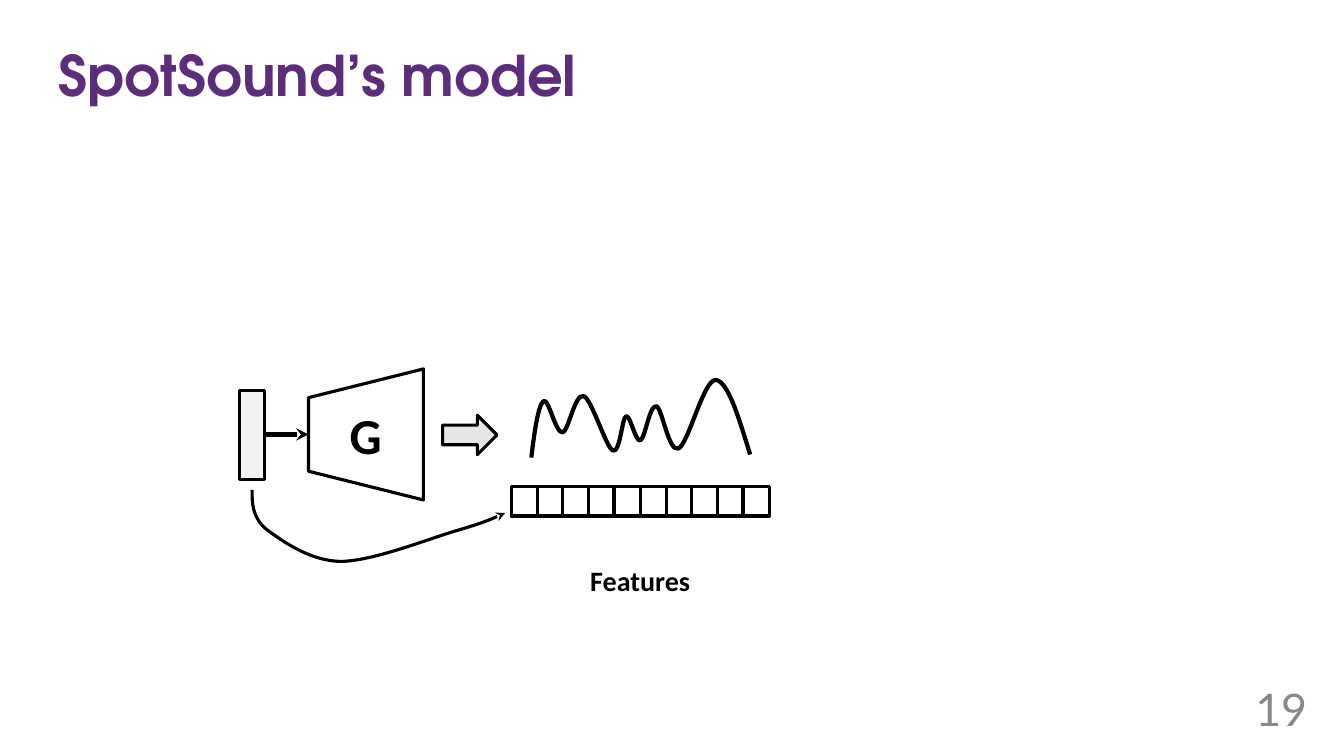
from lxml.etree import SubElement
from pptx import Presentation
from pptx.dml.color import RGBColor
from pptx.enum.shapes import MSO_CONNECTOR, MSO_SHAPE
from pptx.enum.text import MSO_AUTO_SIZE, PP_ALIGN
from pptx.oxml.ns import qn
from pptx.util import Pt

PX = 9144  # 100 px to the inch
COLORS = {"ink": "000000", "title": "5B2D7B", "number": "898989",
          "arrow": "E7E6E6", "noise": "F2F2F2"}


def style(shape, weight, fill=None, arrow=False):
    """Set a black outline, an optional fill and arrowhead, and no shadow."""
    shape.line.color.rgb = RGBColor.from_string(COLORS["ink"])
    shape.line.width = Pt(weight)
    if hasattr(shape, "fill"):
        shape.shadow.inherit = False
        if fill:
            shape.fill.solid()
            shape.fill.fore_color.rgb = RGBColor.from_string(COLORS[fill])
        else:
            shape.fill.background()
    else:
        SubElement(shape._element.spPr, qn("a:effectLst"))
    if arrow:
        SubElement(shape.line._get_or_add_ln(), qn("a:tailEnd"), type="stealth")


def add_text(shapes, box, text, size, font, color, bold=True):
    label = shapes.add_textbox(*(n * PX for n in box))
    frame = label.text_frame
    frame.word_wrap = True
    frame.auto_size = MSO_AUTO_SIZE.SHAPE_TO_FIT_TEXT
    run = frame.paragraphs[0].add_run()
    run.text = text
    run.font.size = Pt(size)
    run.font.name = font
    run.font.bold = bold
    run.font.color.rgb = RGBColor.from_string(COLORS[color])
    return frame


prs = Presentation()
prs.slide_width, prs.slide_height = 1333 * PX, 750 * PX
slide = prs.slides.add_slide(prs.slide_layouts[6])

# Page number and title
page_number = add_text(slide.shapes, (1241, 700, 69, 32), "19", 32, "Lato", "number", False)
page_number.margin_left = page_number.margin_right = 0
page_number.margin_top = page_number.margin_bottom = 0
page_line = page_number.paragraphs[0]
page_line.line_spacing = Pt(21.2)
page_line._p.get_or_add_pPr().set("marL", str(4 * PX))
page_line.runs[0].font._element.set("spc", "-20")
add_text(slide.shapes, (48, 35, 782, 77), "SpotSound’s model", 40,
         "TeX Gyre Adventor", "title")

# Generator with its input vector and output arrow
generator = slide.shapes.add_group_shape().shapes
for kind, box, fill, turn in (
    (MSO_SHAPE.TRAPEZOID, (298, 374, 130, 114), None, 270),
    (MSO_SHAPE.RIGHT_ARROW, (439, 412, 54, 39), "arrow", 0),
    (MSO_SHAPE.RECTANGLE, (238, 387, 24, 89), "noise", 0),
):
    part = generator.add_shape(kind, *(n * PX for n in box))
    part.rotation = turn
    style(part, 2.25, fill)
generator_label = add_text(generator, (337, 396, 52, 71), "G", 36, "Calibri", "ink")
generator_label.word_wrap = False

# Curves: a start point, then two control points and an end point per piece
skip_path = [(250, 486), (250, 499), (250, 513), (264, 525),
             (279, 536), (306, 556), (337, 557),
             (369, 557), (424, 535), (451, 527),
             (478, 519), (490, 514), (501, 509)]
sound_wave = [(527, 454), (530, 428), (534, 402), (539, 398),
              (544, 394), (551, 430), (558, 429),
              (564, 428), (570, 390), (579, 393),
              (587, 396), (601, 444), (608, 447),
              (615, 450), (617, 414), (621, 413),
              (625, 411), (630, 438), (635, 437),
              (640, 435), (644, 402), (651, 403),
              (657, 405), (663, 449), (673, 445),
              (683, 440), (698, 376), (710, 377),
              (722, 378), (733, 415), (744, 451)]
for points, weight, arrow in ((skip_path, 2.25, True), (sound_wave, 3, False)):
    builder = slide.shapes.build_freeform(*points[0], scale=PX)
    builder.add_line_segments(points[1:], close=False)
    curve = builder.convert_to_shape()
    style(curve, weight, arrow=arrow)
    outline = curve._element.find(".//" + qn("a:path"))
    segments = outline.findall(qn("a:lnTo"))
    for first in range(0, len(segments), 3):
        bezier = SubElement(outline, qn("a:cubicBezTo"))
        for segment in segments[first:first + 3]:
            bezier.append(segment[0])
            outline.remove(segment)

input_arrow = slide.shapes.add_connector(
    MSO_CONNECTOR.STRAIGHT, 262 * PX, 431 * PX, 306 * PX, 431 * PX)
style(input_arrow, 3, arrow=True)

# Feature strip of ten cells
left, top, width, height, cells = 507, 483, 256, 29, 10
features = slide.shapes.add_group_shape().shapes
for i in range(cells + 1):
    x = round(left + i * width / cells) * PX
    divider = features.add_connector(
        MSO_CONNECTOR.STRAIGHT, x, top * PX, x, (top + height) * PX)
    style(divider, 2.25)
strip = features.add_shape(MSO_SHAPE.RECTANGLE, left * PX, top * PX, width * PX, height * PX)
style(strip, 2.25)
caption = add_text(slide.shapes, (507, 554, 256, 44), "Features", 20, "Calibri", "ink")
caption.paragraphs[0].alignment = PP_ALIGN.CENTER

prs.save("out.pptx")
